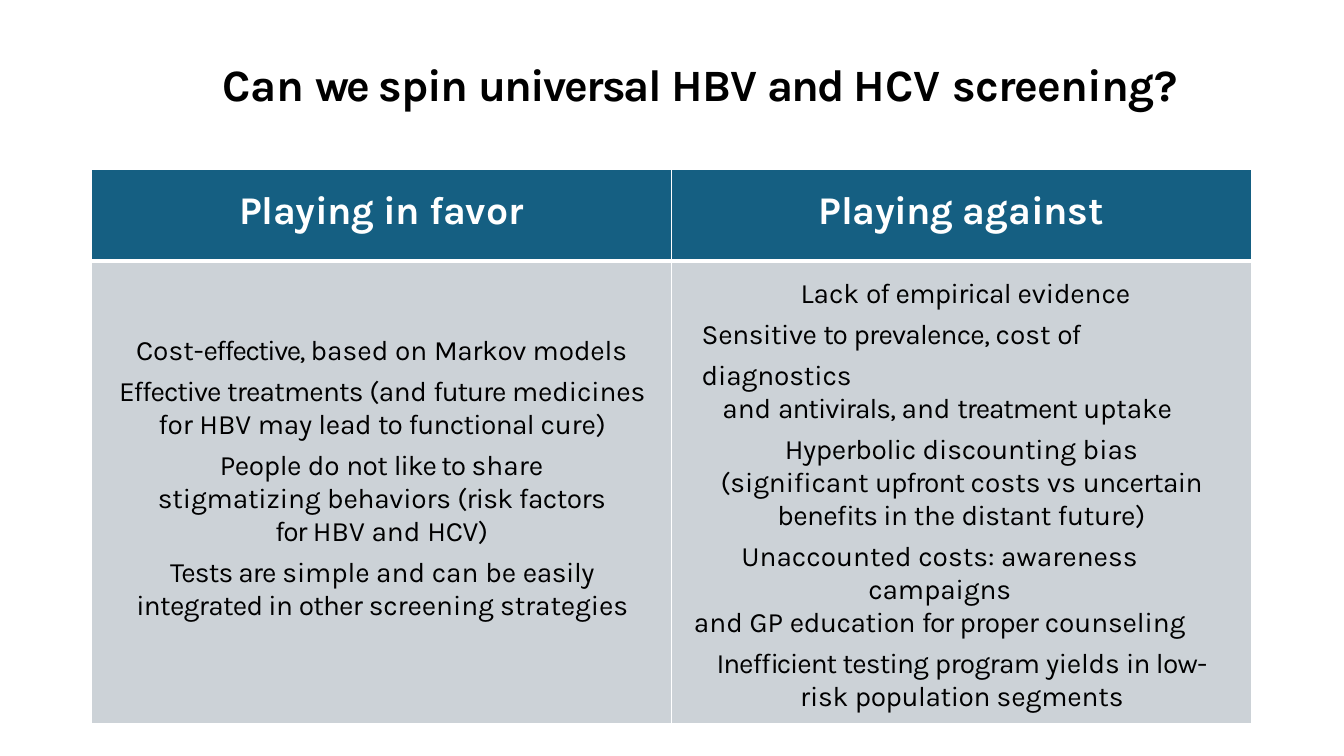
from dataclasses import dataclass

from lxml import etree
from pptx import Presentation
from pptx import util as u
from pptx.dml.color import RGBColor
from pptx.enum import text
from pptx.oxml import ns

BLACK = RGBColor(0x00, 0x00, 0x00)
WHITE = RGBColor(0xFF, 0xFF, 0xFF)
TEAL = RGBColor(0x15, 0x5F, 0x82)
GREY = RGBColor(0xCC, 0xD2, 0xD7)
FONT = "Karla"
LEFT, CENTER = text.PP_ALIGN.LEFT, text.PP_ALIGN.CENTER


@dataclass(frozen=True)
class Para:
    """A paragraph: (text, letter spacing in points) runs, indents in inches."""
    runs: tuple[tuple[str, float], ...]
    left: float = 0
    right: float = 0
    first: float = 0
    before: float = 0
    line: float = 1.0
    align: text.PP_ALIGN = CENTER


@dataclass(frozen=True)
class Column:
    heading: Para
    points: tuple[Para, ...]
    top: float


# Content
TITLE = Para((("Can ", -0.4), ("we ", -1.9), ("spin ", -1), ("universal ", -1.4),
              ("HBV ", -0.7), ("and ", -1.6), ("HCV ", 0), ("screening?", -0.6)),
             left=1.56, align=LEFT)

FAVOR = Column(
    Para((("Playing ", -0.3), ("in ", -0.7), ("favor", -0.1))),
    (
        Para((("Cost-", 0), ("effective, ", -1.1), ("based on ", 0),
              ("Markov ", -0.3), ("models", -0.1))),
        Para((("Effective ", -0.8), ("treatments ", -0.6), ("(and ", -0.3),
              ("future ", -0.8), ("medicines ", -0.1), ("for ", -0.2), ("HBV ", 0),
              ("may lead ", -0.2), ("to ", -0.8), ("functional ", -0.5),
              ("cure)", -0.1)), left=0.14, right=0.13, before=6),
        Para((("People ", -0.3), ("do ", 0), ("not ", -0.5), ("like to ", -0.8),
              ("share ", 0), ("stigmatizing ", -0.1), ("behaviors ", -0.2),
              ("(risk ", -0.6), ("factors ", -0.4), ("for ", -0.9),
              ("HBV and ", 0), ("HCV)", -0.2)), left=0.47, right=0.47, before=6),
        Para((("Tests are ", -0.6), ("simple ", -0.1), ("and can ", 0), ("be ", -0.1),
              ("easily ", -0.3), ("integrated in ", -0.5), ("other ", -0.6),
              ("screening strategies", -0.1)), left=0.21, right=0.2, before=6),
    ), top=0.73)

AGAINST = Column(
    Para((("Playing ", -0.3), ("against", -0.1))),
    (
        Para((("Lack ", 0), ("of ", -0.7), ("empirical ", -0.5), ("evidence ", -0.1),
              ("Sensitive ", -0.3), ("to ", -0.8), ("prevalence, ", -0.6),
              ("cost ", 0), ("of ", -0.7), ("diagnostics", -0.1)),
             left=0.3, right=0.58, first=0.98, before=6.8, line=1.25, align=LEFT),
        Para((("and ", 0), ("antivirals, ", -0.7), ("and ", 0),
              ("treatment ", -0.8), ("uptake", -0.1)), right=0.28),
        Para((("Hyperbolic ", -0.3), ("discounting ", -0.1), ("bias ", 0),
              ("(significant ", -0.1), ("upfront ", -0.7), ("costs vs ", 0),
              ("uncertain ", -0.4), ("benefits in ", -0.5), ("the ", -0.2),
              ("distant ", -0.4), ("future)", -0.1)), left=0.44, right=0.44, before=6),
        Para((("Unaccounted costs: awareness ", 0), ("campaigns", -0.1)),
             right=0.43, before=6),
        Para((("and GP ", 0), ("education ", -0.3), ("for ", -0.9),
              ("proper ", -0.5), ("counseling", -0.1)), right=0.43),
        Para((("Inefficient ", -0.8), ("testing ", -0.6), ("program ", -0.5),
              ("yields ", -0.2), ("in low-", -0.5), ("risk ", -0.2),
              ("population ", -0.3), ("segments", -0.1)),
             left=0.29, right=0.28, before=6),
    ), top=0.09)


def add_run(p, words: str, *, size: float, color: RGBColor, bold: bool,
            spacing: float) -> None:
    r = p.add_run()
    r.text = words
    r.font.name, r.font.size, r.font.bold = FONT, u.Pt(size), bold
    r.font.color.rgb = color
    r.font._element.set("spc", str(round(spacing * 100)))


def write(tf, paras: tuple[Para, ...], *, size: float, color: RGBColor = BLACK,
          bold: bool = False) -> None:
    for i, para in enumerate(paras):
        p = tf.add_paragraph() if i else tf.paragraphs[0]
        p.alignment, p.line_spacing = para.align, para.line
        p.space_before, p.space_after = u.Pt(para.before), u.Pt(0)
        pPr = p._p.get_or_add_pPr()
        for name, inches in (("marL", para.left), ("marR", para.right),
                             ("indent", para.first)):
            pPr.set(name, str(u.Inches(inches)))
        for words, spacing in para.runs:
            add_run(p, words, size=size, color=color, bold=bold, spacing=spacing)


def format_cell(cell, fill: RGBColor, *, margin_top: float, top: float,
                bottom: float) -> None:
    """Set fill, margins and white borders; top and bottom widths in points."""
    cell.margin_left = cell.margin_right = cell.margin_bottom = 0
    cell.margin_top = u.Inches(margin_top)
    cell.vertical_anchor = text.MSO_ANCHOR.TOP
    cell.fill.solid()
    cell.fill.fore_color.rgb = fill
    tcPr = cell._tc.get_or_add_tcPr()
    borders = (("a:lnL", 1), ("a:lnR", 1), ("a:lnT", top), ("a:lnB", bottom))
    for i, (tag, width) in enumerate(borders):
        ln = etree.Element(ns.qn(tag), w=str(u.Pt(width)))
        solid = etree.SubElement(ln, ns.qn("a:solidFill"))
        etree.SubElement(solid, ns.qn("a:srgbClr"), val=str(WHITE))
        tcPr.insert(i, ln)


def add_title(s) -> None:
    sp = s.shapes.title
    sp.left, sp.top = u.Inches(0.65), u.Inches(0.47)
    sp.width, sp.height = u.Inches(12.04), u.Inches(0.8)
    tf = sp.text_frame
    tf.margin_left = tf.margin_right = tf.margin_bottom = 0
    tf.margin_top = u.Inches(0.09)
    tf.vertical_anchor = text.MSO_ANCHOR.TOP
    tf.word_wrap = True
    tf.auto_size = text.MSO_AUTO_SIZE.SHAPE_TO_FIT_TEXT
    write(tf, (TITLE,), size=32, bold=True)


def add_comparison(s, columns: tuple[Column, ...]) -> None:
    table = s.shapes.add_table(2, len(columns), u.Inches(0.91), u.Inches(1.68),
                               u.Inches(11.5), u.Inches(4.97)).table
    table.horz_banding = False
    for row, height in zip(table.rows, (0.91, 4.06)):
        row.height = u.Inches(height)
    for i, column in enumerate(columns):
        table.columns[i].width = u.Inches(5.75)
        head, body = table.cell(0, i), table.cell(1, i)
        format_cell(head, TEAL, margin_top=0.19, top=1, bottom=3)
        write(head.text_frame, (column.heading,), size=28, color=WHITE, bold=True)
        format_cell(body, GREY, margin_top=column.top, top=3, bottom=1)
        write(body.text_frame, column.points, size=20)


def main() -> None:
    prs = Presentation()
    prs.slide_width, prs.slide_height = u.Inches(13.33), u.Inches(7.5)
    s = prs.slides.add_slide(prs.slide_layouts[5])
    add_title(s)
    add_comparison(s, (FAVOR, AGAINST))
    prs.save("out.pptx")


if __name__ == "__main__":
    main()
